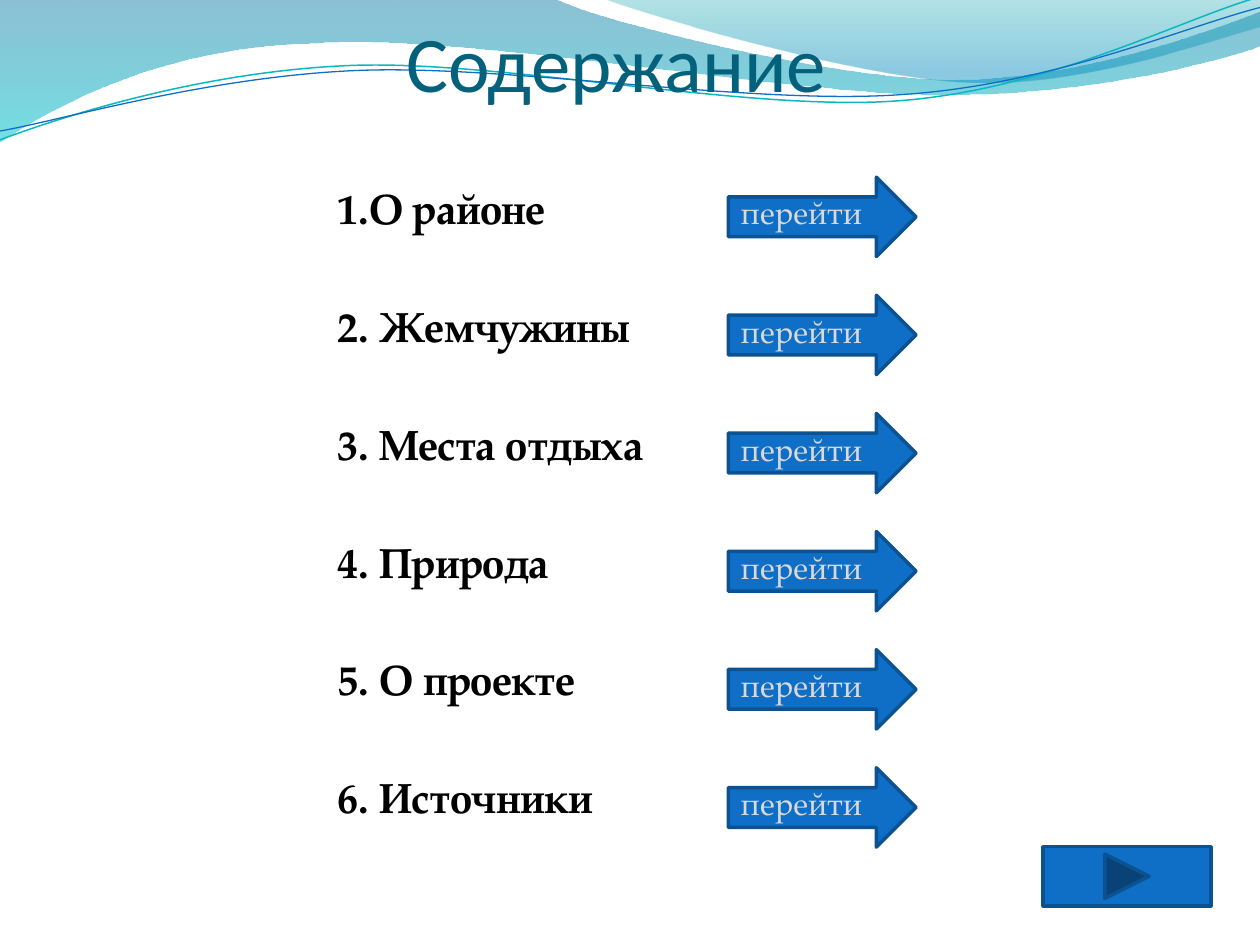
import math
from dataclasses import dataclass

from lxml import etree
from pptx import Presentation
from pptx import util as u
from pptx.dml.color import RGBColor
from pptx.enum import shapes, text
from pptx.oxml.ns import qn


@dataclass(frozen=True)
class Theme:
    """Colours, fonts and sizes of the slide."""
    title_color: str = "04617B"
    text_color: str = "000000"
    label_color: str = "D9D9D9"
    accent: str = "0F6FC6"
    accent_dark: str = "0B5292"
    teal: str = "0AB8BF"
    title_font: str = "Calibri"
    body_font: str = "TeX Gyre Pagella"
    title_size: float = 45
    body_size: float = 24
    label_size: float = 18


THEME = Theme()
TOPICS = ["1.О районе", "2. Жемчужины", "3. Места отдыха",
          "4. Природа", "5. О проекте", "6. Источники"]
ROW_PITCH = 15 / 16
FIRST_TOP = 1.5 * ROW_PITCH
LINE_HEIGHT, LINE_GAP = 28.5, 38.8
CURVE_TILT = 2.7

LEFT_WAVE = [
    (0, 0), (4.4, -0.01),
    (4.76, 0.17, 6.64, 0.63, 7.58, 0.63), (8.53, 0.63, 9.58, 0.26, 10, 0.09),
    (10.01, 0.36),
    (9.83, 0.44, 8.7, 0.76, 7.46, 0.75), (6.22, 0.75, 3.82, 0.28, 2.57, 0.34),
    (1.29, 0.36, 0.46, 0.83, -0.01, 1.13), (0, 0),
]
RIGHT_WAVE = [
    (4.79, -0.01),
    (5.09, 0.11, 6.82, 0.62, 7.69, 0.65), (8.56, 0.69, 9.61, 0.32, 10, 0.21),
    (10, 0), (4.79, -0.01),
]
TEAL_CURVE = [
    (0, 1.11),
    (0.48, 0.93, 1.58, 0.57, 2.77, 0.52), (3.95, 0.47, 5.93, 0.89, 7.13, 0.8),
    (8.33, 0.71, 9.38, 0.15, 9.98, -0.02),
]
BLUE_CURVE = [
    (0, 1.04),
    (0.47, 0.96, 1.64, 0.61, 2.83, 0.56), (4.03, 0.51, 5.97, 0.84, 7.17, 0.75),
    (8.36, 0.67, 9.41, 0.21, 10, 0.06),
]


def rgb(value):
    """Return a colour from its hex value."""
    return RGBColor.from_string(value)


def place(shape, left, top, width, height):
    """Move and size a shape in inches."""
    shape.left, shape.top = u.Inches(left), u.Inches(top)
    shape.width, shape.height = u.Inches(width), u.Inches(height)


def set_font(paragraph, name, size, color, bold=False):
    """Set the font of a whole paragraph."""
    font = paragraph.font
    font.name, font.size, font.bold = name, u.Pt(size), bold
    font.color.rgb = rgb(color)


def turn(segments, center, degrees):
    """Rotate all points of the segments clockwise about a center."""
    cosine, sine = math.cos(math.radians(degrees)), math.sin(math.radians(degrees))
    turned = []
    for segment in segments:
        values = []
        for x, y in zip(segment[::2], segment[1::2]):
            x, y = x - center[0], y - center[1]
            values += [center[0] + x * cosine - y * sine,
                       center[1] + x * sine + y * cosine]
        turned.append(tuple(values))
    return turned


def add_outline(slide, segments, close):
    """Draw a freeform of straight lines and cubic curves."""
    points = [(u.Inches(x), u.Inches(y)) for segment in segments
              for x, y in zip(segment[::2], segment[1::2])]
    builder = slide.shapes.build_freeform(*points[0])
    builder.add_line_segments(points[1:], close=close)
    shape = builder.convert_to_shape()
    shape.shadow.inherit = False
    lines = iter(list(shape.element.iter(qn("a:lnTo"))))
    for segment in segments[1:]:
        group = [next(lines) for _ in segment[::2]]
        if len(group) == 3:
            curve = etree.Element(qn("a:cubicBezTo"))
            group[0].addprevious(curve)
            for line in group:
                curve.append(line[0])
                line.getparent().remove(line)
    return shape


def add_wave(slide, segments, stops):
    """Add a translucent wave with a gradient from top to bottom."""
    shape = add_outline(slide, segments, True)
    shape.line.fill.background()
    shape.fill.gradient()
    shape.fill.gradient_angle = 270
    for stop, (position, color, _) in zip(shape.fill.gradient_stops, stops):
        stop.position = position
        stop.color.rgb = rgb(color)
    for color, (_, _, opacity) in zip(shape.element.iter(qn("a:srgbClr")), stops):
        etree.SubElement(color, qn("a:alpha"), val=str(opacity * 1000))


def add_curve(slide, segments, center, color, width):
    """Add a thin open curve in a tilted frame."""
    shape = add_outline(slide, turn(segments, center, CURVE_TILT), False)
    shape.rotation = 360 - CURVE_TILT
    shape.fill.background()
    shape.line.color.rgb = rgb(color)
    shape.line.width = u.Pt(width)


def fill_title(slide):
    """Fill the title placeholder and bring it in front of the waves."""
    title = slide.shapes.title
    slide.shapes.element.append(title.element)
    place(title, 0.39, 0, 9, 0.86)
    frame = title.text_frame
    frame.text = "Содержание"
    frame.auto_size = text.MSO_AUTO_SIZE.NONE
    frame.vertical_anchor = text.MSO_ANCHOR.BOTTOM
    frame.margin_left = frame.margin_right = frame.margin_bottom = 0
    paragraph = frame.paragraphs[0]
    paragraph.alignment = text.PP_ALIGN.CENTER
    set_font(paragraph, THEME.title_font, THEME.title_size, THEME.title_color)


def fill_topics(slide):
    """Fill the body placeholder with one topic per row."""
    body = slide.placeholders[1]
    slide.shapes.element.append(body.element)
    place(body, 2.58, FIRST_TOP, 2.81, 5.5)
    frame = body.text_frame
    frame.text = "\n".join(TOPICS)
    frame.auto_size = text.MSO_AUTO_SIZE.NONE
    for paragraph in frame.paragraphs:
        properties = paragraph._p.get_or_add_pPr()
        properties.set("marL", str(u.Inches(0.56)))
        properties.set("indent", str(u.Inches(-0.56)))
        etree.SubElement(properties, qn("a:buNone"))
        paragraph.line_spacing = u.Pt(LINE_HEIGHT)
        paragraph.space_before = u.Pt(0)
        paragraph.space_after = u.Pt(LINE_GAP)
        set_font(paragraph, THEME.body_font, THEME.body_size, THEME.text_color, True)


def add_button(slide, kind, left, top, width, height):
    """Add a blue navigation shape."""
    shape = slide.shapes.add_shape(kind, *map(u.Inches, (left, top, width, height)))
    shape.shadow.inherit = False
    shape.fill.solid()
    shape.fill.fore_color.rgb = rgb(THEME.accent)
    shape.line.color.rgb = rgb(THEME.accent_dark)
    shape.line.width = u.Pt(2)


def add_label(slide, left, top):
    """Add the caption of an arrow."""
    box = slide.shapes.add_textbox(*map(u.Inches, (left, top, 1.33, 0.4)))
    frame = box.text_frame
    frame.word_wrap = True
    frame.auto_size = text.MSO_AUTO_SIZE.SHAPE_TO_FIT_TEXT
    frame.text = "перейти"
    set_font(frame.paragraphs[0], THEME.body_font, THEME.label_size, THEME.label_color)


def main():
    """Build and save the contents slide."""
    presentation = Presentation()
    presentation.slide_width, presentation.slide_height = u.Inches(10), u.Inches(7.5)
    slide = presentation.slides.add_slide(presentation.slide_layouts[1])
    add_wave(slide, LEFT_WAVE, [(0, "0074A1", 45), (1, "00C6CF", 55)])
    add_wave(slide, RIGHT_WAVE, [(0, "00A1A9", 30), (0.8, "008BBF", 45)])
    add_curve(slide, TEAL_CURVE, (4.99, 0.58), THEME.teal, 0.85)
    add_curve(slide, BLUE_CURVE, (5, 0.59), THEME.accent, 0.75)
    fill_title(slide)
    fill_topics(slide)
    add_button(slide, shapes.MSO_SHAPE.ACTION_BUTTON_FORWARD_OR_NEXT, 8.28, 6.72, 1.33, 0.47)
    tops = [FIRST_TOP + row * ROW_PITCH for row in range(len(TOPICS))]
    for top in tops:
        add_button(slide, shapes.MSO_SHAPE.RIGHT_ARROW, 5.78, top, 1.49, 0.63)
    for top in tops:
        add_label(slide, 5.78, top + 0.08)
    presentation.save("out.pptx")


if __name__ == "__main__":
    main()
